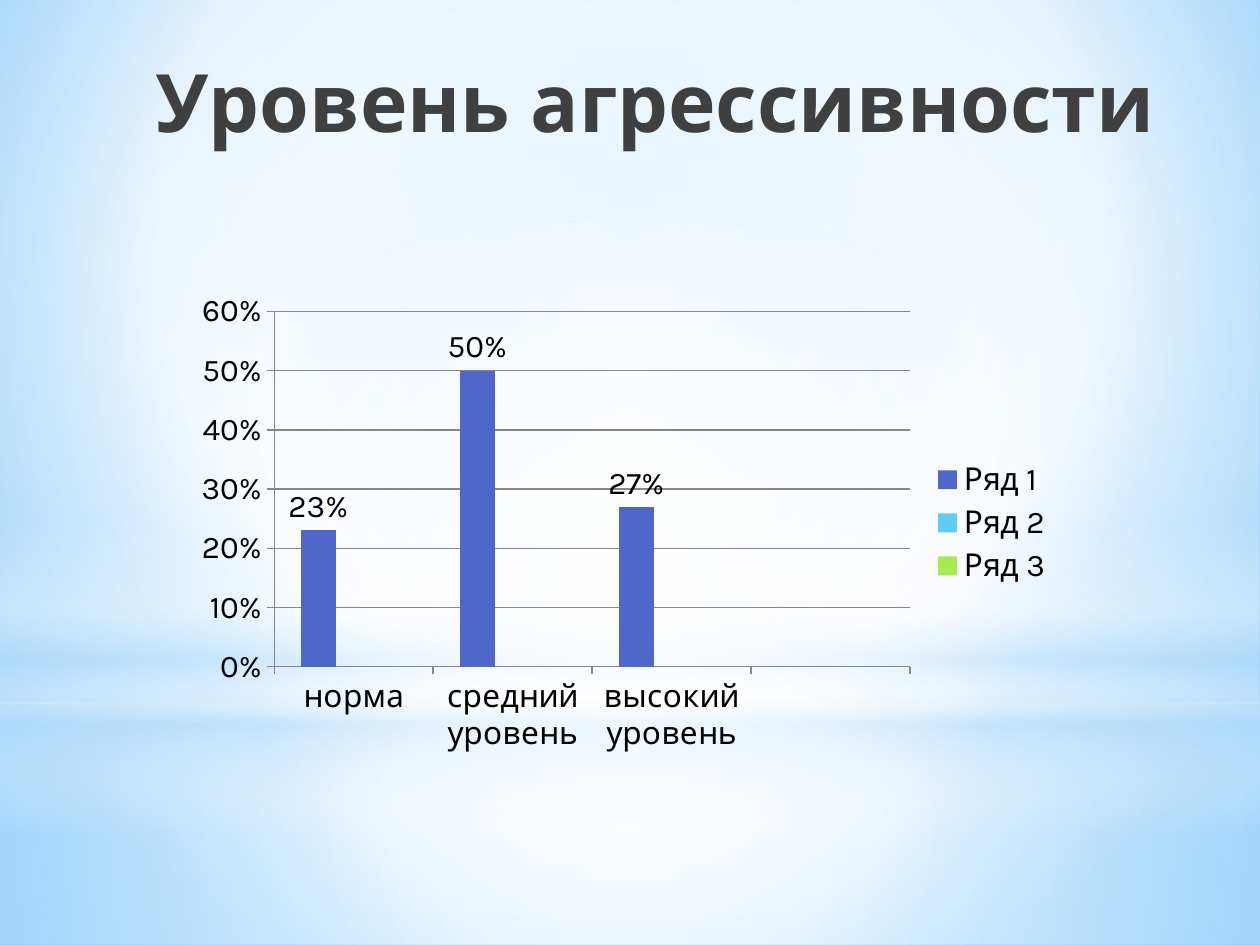
from lxml import etree
from pptx import Presentation
from pptx import util as u
from pptx.chart.data import CategoryChartData
from pptx.dml.color import RGBColor
from pptx.enum import chart as charts, shapes, text
from pptx.oxml.ns import qn

COLORS = {
    "white": "FFFFFF", "pale": "B4DCFA", "sky": "9ED5FF", "deep": "5BB9FF",
    "title": "404040", "black": "000000", "grid": "878787",
    "Ряд 1": "4E67C8", "Ряд 2": "5ECCF3", "Ряд 3": "A7EA52",
}
FONT = "Karla"


def color(name):
    return RGBColor.from_string(COLORS[name])


def set_gradient(element, stops, focus=None):
    solid = element.find(".//" + qn("a:solidFill"))
    gradient = etree.Element(qn("a:gradFill"), rotWithShape="1")
    stop_list = etree.SubElement(gradient, qn("a:gsLst"))
    for position, name, opacity in stops:
        stop = etree.SubElement(stop_list, qn("a:gs"), pos=str(position * 1000))
        tone = etree.SubElement(stop, qn("a:srgbClr"), val=COLORS[name])
        if opacity < 100:
            etree.SubElement(tone, qn("a:alpha"), val=str(opacity * 1000))
    if focus:
        circle = etree.SubElement(gradient, qn("a:path"), path="circle")
        sides = {side: str(value * 1000) for side, value in zip("ltrb", focus)}
        etree.SubElement(circle, qn("a:fillToRect"), **sides)
    else:
        etree.SubElement(gradient, qn("a:lin"), ang="5400000", scaled="0")
    solid.getparent().replace(solid, gradient)


presentation = Presentation()
presentation.slide_width = u.Inches(10)
presentation.slide_height = u.Inches(7.5)
slide = presentation.slides.add_slide(presentation.slide_layouts[5])

slide.background.fill.solid()
set_gradient(slide.background._cSld, [(0, "sky", 100), (60, "white", 100), (100, "deep", 100)],
             (20, 10, 20, 60))

center = (50, 50, 50, 50)
rectangle, oval = shapes.MSO_SHAPE.RECTANGLE, shapes.MSO_SHAPE.OVAL
glows = [
    (rectangle, 5.58, 1.92, center, [(0, "white", 91), (37, "white", 76), (100, "pale", 79)]),
    (rectangle, 0, 5.58, center, [(0, "white", 89), (48, "white", 62), (100, "pale", 79)]),
    (rectangle, 4.12, 2.5, None, [(0, "white", 0), (29, "white", 30), (45, "pale", 40),
                                  (55, "white", 26), (65, "pale", 60), (100, "white", 0)]),
    (oval, 1.75, 5.58, center, [(0, "white", 100), (56, "white", 0)]),
]
for kind, top, height, focus, stops in glows:
    shape = slide.shapes.add_shape(kind, 0, u.Inches(top), u.Inches(10), u.Inches(height))
    shape.shadow.inherit = False
    shape.line.fill.background()
    shape.fill.solid()
    set_gradient(shape._element, stops, focus)

title = slide.shapes.title
slide.shapes._spTree.append(title._element)
title.left, title.top = u.Inches(0.28), u.Inches(0.36)
title.width, title.height = u.Inches(8.98), u.Inches(1.25)
title.text_frame.text = "Уровень агрессивности"
title.text_frame.vertical_anchor = text.MSO_ANCHOR.TOP
paragraph = title.text_frame.paragraphs[0]
paragraph.alignment = text.PP_ALIGN.RIGHT
paragraph.font.name = FONT
paragraph.font.size = u.Pt(46)
paragraph.font.bold = True
paragraph.font.color.rgb = color("title")

data = CategoryChartData(number_format="0%")
data.categories = ["норма", "средний уровень", "высокий уровень", ""]
data.add_series("Ряд 1", [0.23, 0.5, 0.27, None])
data.add_series("Ряд 2", [None] * 4)
data.add_series("Ряд 3", [None] * 4)
chart = slide.shapes.add_chart(
    charts.XL_CHART_TYPE.COLUMN_CLUSTERED,
    u.Inches(1.46), u.Inches(2.25), u.Inches(7), u.Inches(3.8), data).chart
chart.has_title = False
chart.font.name = FONT
chart.font.size = u.Pt(18)
chart.font.color.rgb = color("black")
chart.has_legend = True
chart.legend.position = charts.XL_LEGEND_POSITION.RIGHT
chart.legend.include_in_layout = False

for axis in (chart.category_axis, chart.value_axis):
    axis.major_tick_mark = charts.XL_TICK_MARK.OUTSIDE
    axis.format.line.color.rgb = color("grid")
    axis.format.line.width = u.Pt(0.75)
value_axis = chart.value_axis
value_axis.has_major_gridlines = True
value_axis.major_gridlines.format.line.color.rgb = color("grid")
value_axis.major_gridlines.format.line.width = u.Pt(0.75)
value_axis.minimum_scale, value_axis.maximum_scale = 0, 0.6
value_axis.major_unit = 0.1
value_axis.tick_labels.number_format = "0%"
value_axis.tick_labels.number_format_is_linked = False

plot = chart.plots[0]
plot.gap_width = 150
plot.vary_by_categories = False
for series in plot.series:
    series.format.fill.solid()
    series.format.fill.fore_color.rgb = color(series.name)
labels = plot.series[0].data_labels
labels.show_value = True
labels.number_format = "0%"
labels.number_format_is_linked = False
labels.position = charts.XL_LABEL_POSITION.OUTSIDE_END

presentation.save("out.pptx")
